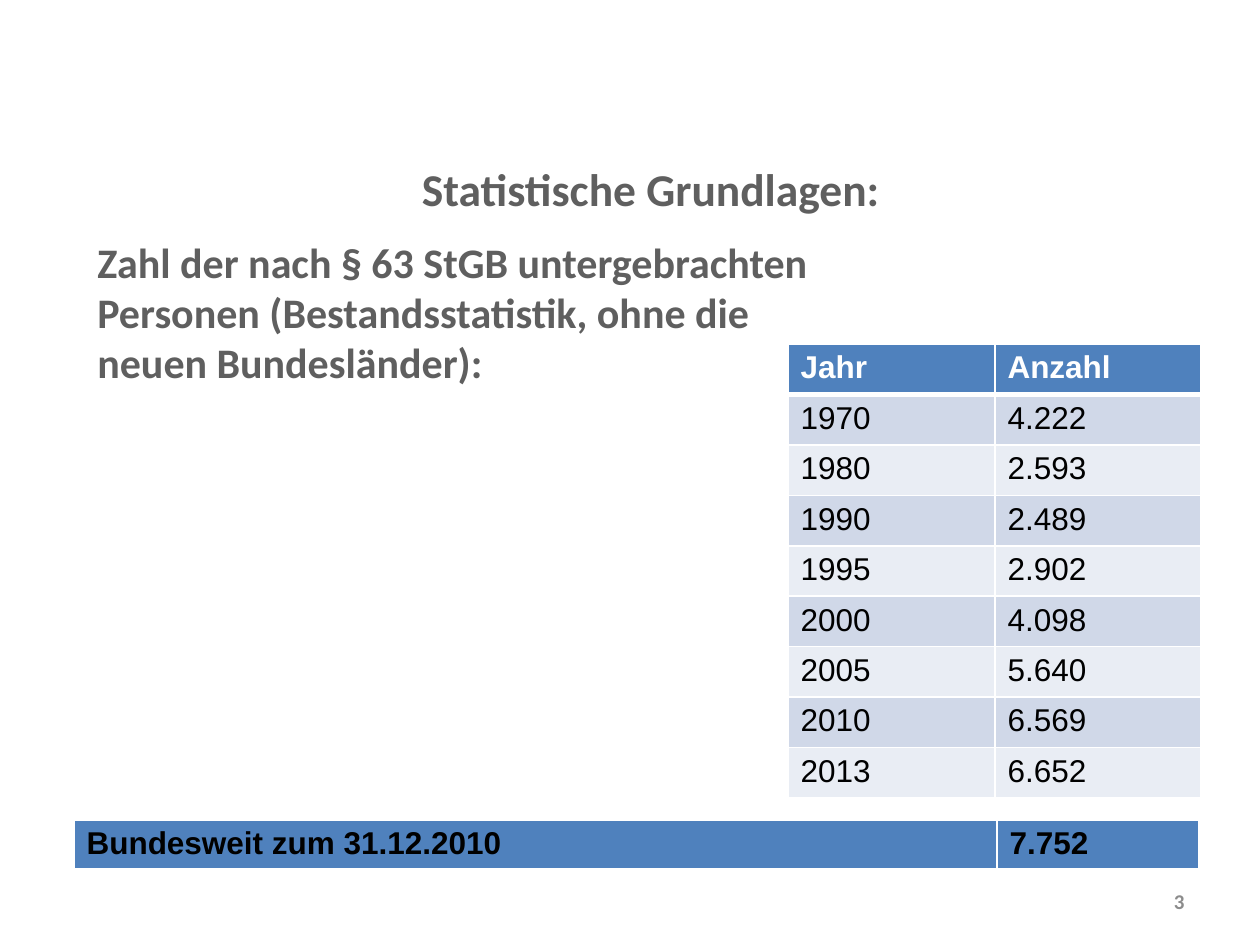
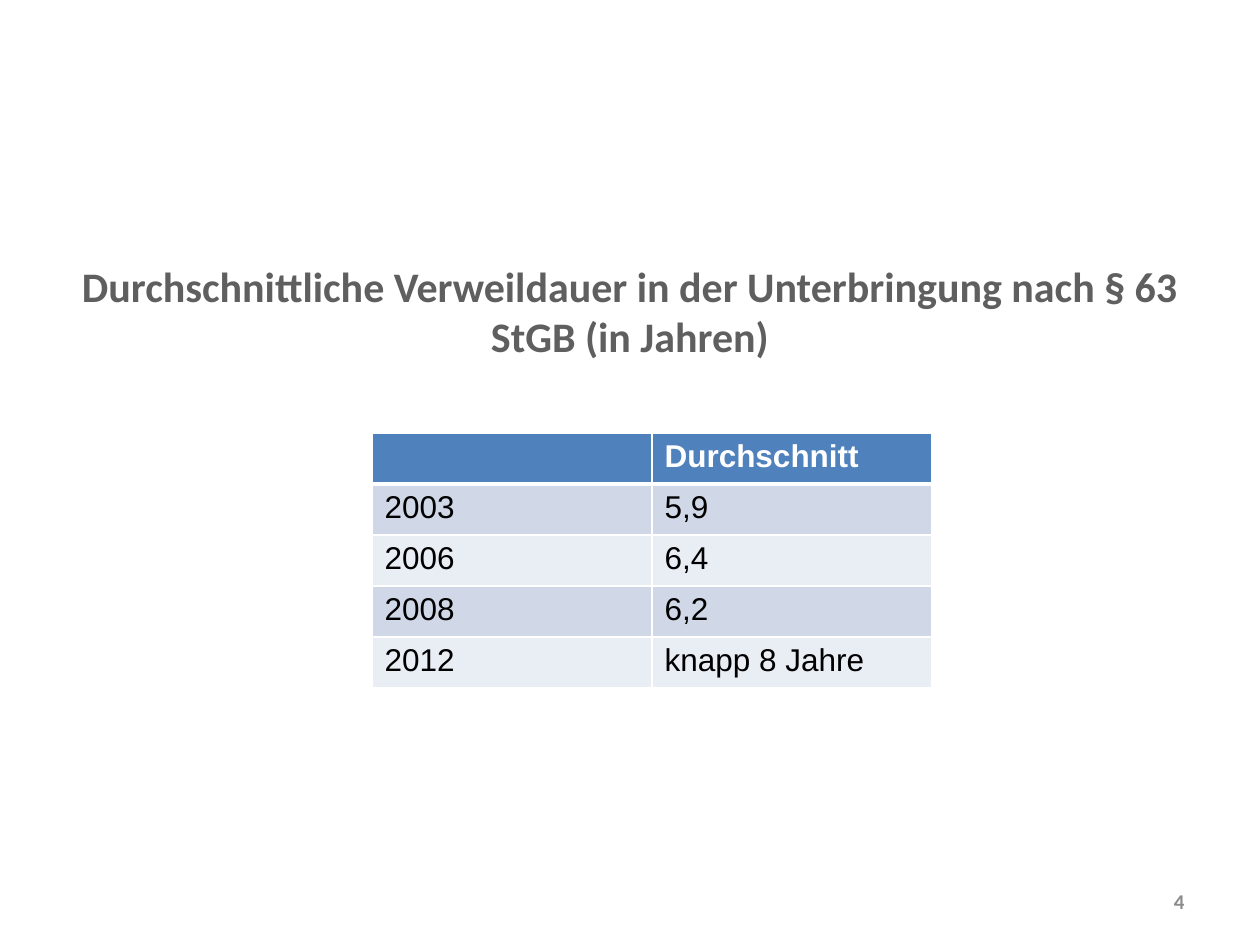
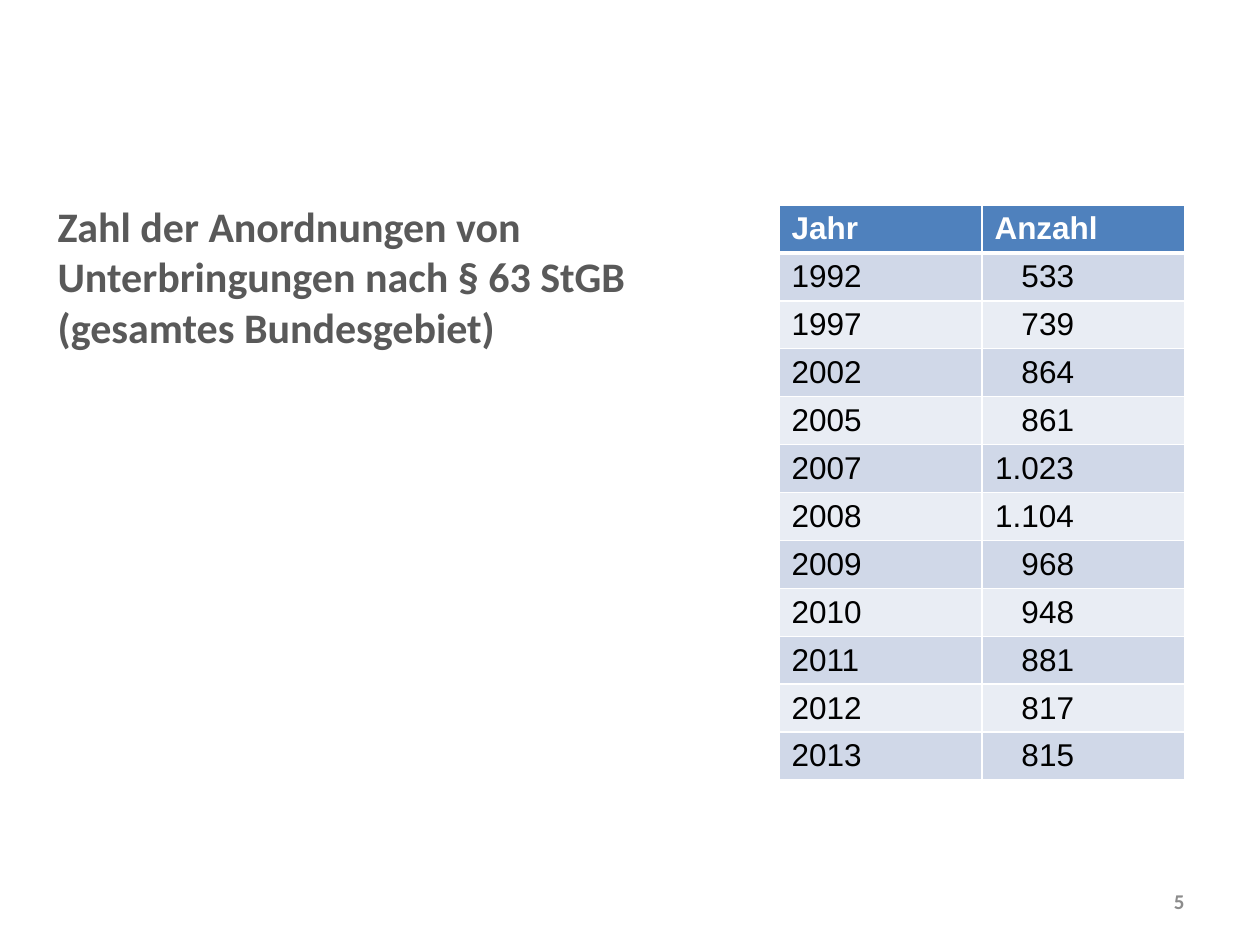
import pptx
import pptx.util
import pptx.dml.color
import pptx.enum.text
import pptx.oxml
import pptx.oxml.ns

PX = 7257
GREY = "5F5F5F"
BLUE = "4F81BD"
BANDS = ["D0D8E8", "E9EDF4"]
ALIGN = pptx.enum.text.PP_ALIGN
ANCHOR = pptx.enum.text.MSO_ANCHOR


def rgb(value):
    return pptx.dml.color.RGBColor.from_string(value)


def write(tf, text, size=18, color="000000", font="Arial", bold=False,
          align=ALIGN.LEFT, anchor=ANCHOR.TOP):
    tf.word_wrap = True
    tf.vertical_anchor = anchor
    for i, line in enumerate(text.split("\n")):
        p = tf.paragraphs[0] if i == 0 else tf.add_paragraph()
        p.alignment = align
        p.space_before = pptx.util.Pt(0)
        r = p.add_run()
        r.text = line
        r.font.size = pptx.util.Pt(size)
        r.font.name = font
        r.font.bold = bold
        r.font.color.rgb = rgb(color)


inmates = [("Jahr", "Anzahl"), ("1970", "4.222"), ("1980", "2.593"),
           ("1990", "2.489"), ("1995", "2.902"), ("2000", "4.098"),
           ("2005", "5.640"), ("2010", "6.569"), ("2013", "6.652")]
nationwide = [("Bundesweit zum 31.12.2010", "7.752")]
durations = [("", "Durchschnitt"), ("2003", "5,9"), ("2006", "6,4"),
             ("2008", "6,2"), ("2012", "knapp 8 Jahre")]
orders = [("Jahr", "Anzahl"), ("1992", "533"), ("1997", "739"),
          ("2002", "864"), ("2005", "861"), ("2007", "1.023"),
          ("2008", "1.104"), ("2009", "968"), ("2010", "948"),
          ("2011", "881"), ("2012", "817"), ("2013", "815")]

slides = [
    dict(title="Statistische Grundlagen:", box=(84, 155, 1134, 70),
         size=26, color=GREY, align=ALIGN.CENTER,
         body="Zahl der nach § 63 StGB untergebrachten\n"
              "Personen (Bestandsstatistik, ohne die\n"
              "neuen Bundesländer):",
         tables=[dict(rows=inmates, at=(788, 344), cols=(207, 206),
                      head=20, height=48),
                 dict(rows=nationwide, at=(74, 820), cols=(923, 202),
                      head=20, height=20)]),
    dict(title="Durchschnittliche Verweildauer in der Unterbringung nach § 63 "
               "StGB (in Jahren)", box=(63, 254, 1134, 120),
         size=24, color=GREY, align=ALIGN.CENTER,
         tables=[dict(rows=durations, at=(372, 433), cols=(280, 280),
                      head=51, height=51)]),
    dict(title="Zahl der Anordnungen von\nUnterbringungen nach § 63 StGB\n"
               "(gesamtes Bundesgebiet)", box=(45, 194, 700, 170),
         size=24, color="595959", align=ALIGN.LEFT,
         tables=[dict(rows=orders, at=(779, 205), cols=(203, 203),
                      head=39, height=39, number_margin=111)]),
]

prs = pptx.Presentation()
prs.slide_width = 1260 * PX
prs.slide_height = 945 * PX

for number, page in enumerate(slides, start=3):
    s = prs.slides.add_slide(prs.slide_layouts[5])
    sp = s.shapes.title
    sp.left, sp.top, sp.width, sp.height = [v * PX for v in page["box"]]
    sp.text_frame.auto_size = pptx.enum.text.MSO_AUTO_SIZE.NONE
    write(sp.text_frame, page["title"], size=page["size"], color=page["color"],
          font="Calibri", bold=True, align=page["align"])

    if "body" in page:
        sp = s.shapes.add_textbox(85 * PX, 230 * PX, 760 * PX, 170 * PX)
        write(sp.text_frame, page["body"], size=24, color=GREY,
              font="Calibri", bold=True)

    for t in page["tables"]:
        rows, cols, (left, top) = t["rows"], t["cols"], t["at"]
        heights = [t["head"]] + [t["height"]] * (len(rows) - 1)
        table = s.shapes.add_table(
            len(rows), len(cols), left * PX, top * PX,
            sum(cols) * PX, sum(heights) * PX).table
        for i, width in enumerate(cols):
            table.columns[i].width = width * PX
        for i, row in enumerate(rows):
            table.rows[i].height = heights[i] * PX
            for j, text in enumerate(row):
                cell = table.cell(i, j)
                align = ALIGN.LEFT
                if i and j and "number_margin" in t:
                    align = ALIGN.RIGHT
                    cell.margin_left = 0
                    cell.margin_right = t["number_margin"] * PX
                if text:
                    color = "FFFFFF" if i == 0 and len(rows) > 1 else "000000"
                    write(cell.text_frame, text, color=color, bold=i == 0,
                          align=align)
                tcPr = cell._tc.get_or_add_tcPr()
                for side in "LRTB":
                    heavy = (side == "B" and i == 0) or (side == "T" and i == 1)
                    tcPr.append(pptx.oxml.parse_xml(
                        f'<a:ln{side} {pptx.oxml.ns.nsdecls("a")} '
                        f'w="{pptx.util.Pt(3 if heavy else 1)}"><a:solidFill>'
                        f'<a:srgbClr val="FFFFFF"/></a:solidFill></a:ln{side}>'))
                cell.fill.solid()
                cell.fill.fore_color.rgb = rgb(BANDS[(i - 1) % 2] if i else BLUE)

    sp = s.shapes.add_textbox(903 * PX, 876 * PX, 294 * PX, 50 * PX)
    write(sp.text_frame, str(number), size=12, color="8C8C8C", font="Calibri",
          bold=True, align=ALIGN.RIGHT, anchor=ANCHOR.MIDDLE)

prs.save("out.pptx")
